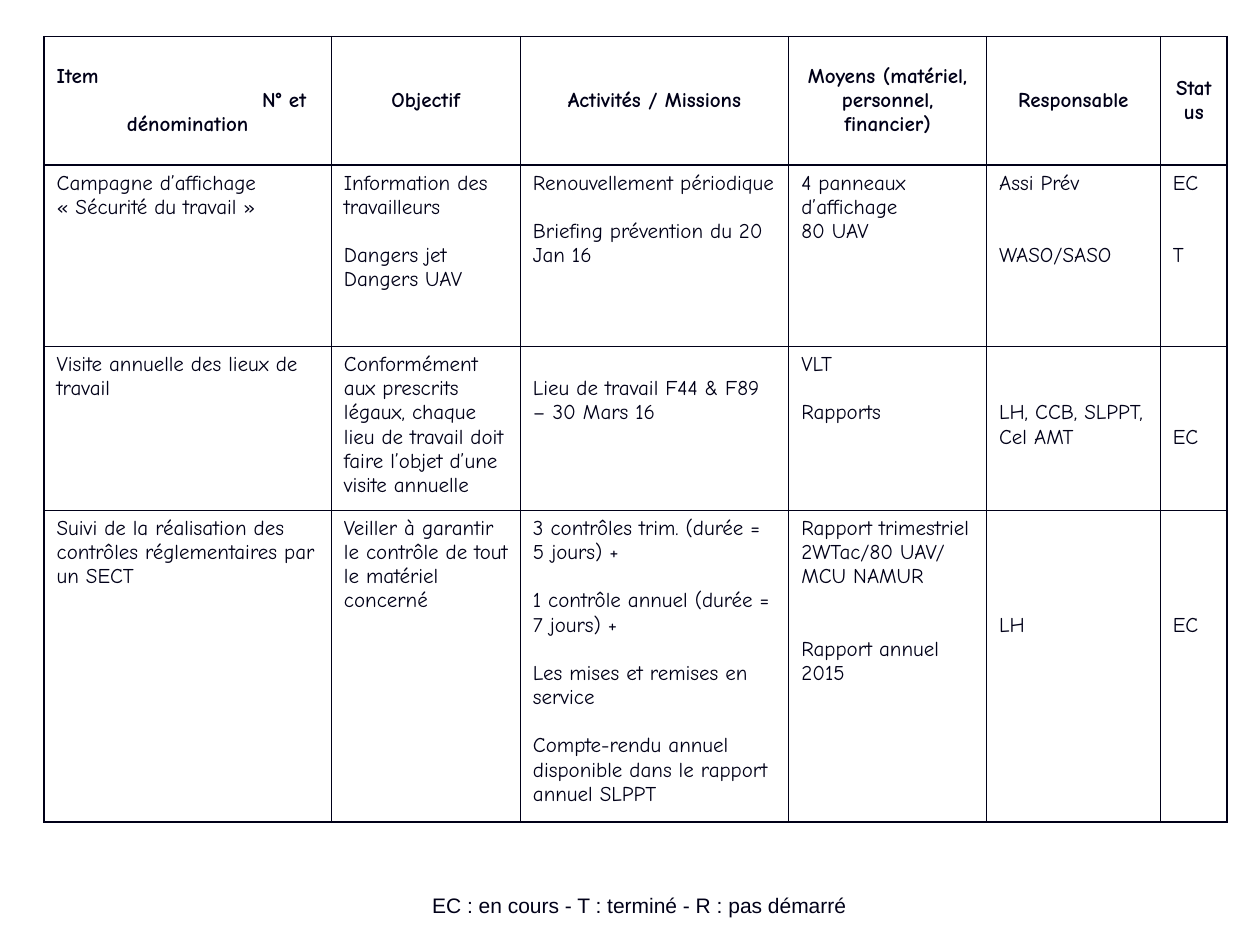
from dataclasses import dataclass

from lxml import etree
from pptx import Presentation
from pptx.dml.color import RGBColor
from pptx.enum.text import MSO_ANCHOR as Anchor, PP_ALIGN as Align
from pptx.oxml.ns import qn
from pptx.util import Inches, Pt

INK = "000018"
TABLE_FONT = "Comic Neue"
TEXT_SIZE = 12
LINE_POINTS = 13.8  # height of one line of table text
COLUMN_WIDTHS = [2.28, 1.5, 2.13, 1.57, 1.38, 0.53]
ROW_HEIGHTS = [1.02, 1.44, 1.26, 2.41]


@dataclass
class Line:
    """One paragraph, with the number of empty lines above it."""
    text: str
    gap: int = 0
    align: Align = Align.LEFT
    bold: bool = False
    right_indent: float = 0


def heading(text: str, align: Align = Align.CENTER, right_indent: float = 0) -> Line:
    return Line(text, 0, align, True, right_indent)


HEADINGS = [
    [heading("Item", Align.LEFT), heading("N° et", Align.RIGHT, 0.1), heading("dénomination")],
    [heading("Objectif")],
    [heading("Activités / Missions")],
    [heading("Moyens (matériel, personnel, financier)")],
    [heading("Responsable")],
    [heading("Status")],
]

ACTIONS = [
    [
        [Line("Campagne d’affichage"), Line("« Sécurité du travail »")],
        [Line("Information des travailleurs"), Line("Dangers jet", 1), Line("Dangers UAV")],
        [Line("Renouvellement périodique"), Line("Briefing prévention du 20 Jan 16", 1)],
        [Line("4 panneaux d’affichage"), Line("80 UAV")],
        [Line("Assi Prév"), Line("WASO/SASO", 2)],
        [Line("EC"), Line("T", 2)],
    ],
    [
        [Line("Visite annuelle des lieux de travail")],
        [Line("Conformément aux prescrits légaux, chaque lieu de travail doit "
              "faire l’objet d’une visite annuelle")],
        [Line("Lieu de travail F44 & F89 – 30 Mars 16", 1)],
        [Line("VLT"), Line("Rapports", 1)],
        [Line("LH, CCB, SLPPT, Cel AMT", 2)],
        [Line("EC", 3)],
    ],
    [
        [Line("Suivi de la réalisation des contrôles réglementaires par un SECT")],
        [Line("Veiller à garantir le contrôle de tout le matériel concerné")],
        [Line("3 contrôles trim. (durée = 5 jours) +"),
         Line("1 contrôle annuel (durée = 7 jours) +", 1),
         Line("Les mises et remises en service", 1),
         Line("Compte-rendu annuel disponible dans le rapport annuel SLPPT", 1)],
        [Line("Rapport trimestriel 2WTac/80 UAV/"), Line("MCU NAMUR"),
         Line("Rapport annuel 2015", 2)],
        [Line("LH", 4)],
        [Line("EC", 4)],
    ],
]


def color(hex_value: str) -> RGBColor:
    return RGBColor.from_string(hex_value)


def add_run(paragraph, text: str, font_name: str, bold: bool = False) -> None:
    run = paragraph.add_run()
    run.text = text
    run.font.name = font_name
    run.font.size = Pt(TEXT_SIZE)
    run.font.bold = bold
    run.font.color.rgb = color(INK)


def add_borders(cell) -> None:
    properties = cell._tc.get_or_add_tcPr()
    for side in ("lnL", "lnR", "lnT", "lnB"):
        border = etree.SubElement(properties, qn(f"a:{side}"), w=str(Pt(1)))
        fill = etree.SubElement(border, qn("a:solidFill"))
        etree.SubElement(fill, qn("a:srgbClr"), val=INK)


def fill_cell(cell, lines: list[Line], anchor: Anchor) -> None:
    add_borders(cell)
    cell.fill.background()
    cell.vertical_anchor = anchor
    cell.margin_left = cell.margin_right = Inches(0.1)
    cell.margin_bottom = Inches(0.05)
    # Empty lines above the first paragraph become top margin
    cell.margin_top = Inches(0.05) + Pt(lines[0].gap * LINE_POINTS)
    frame = cell.text_frame
    for index, line in enumerate(lines):
        paragraph = frame.add_paragraph() if index else frame.paragraphs[0]
        paragraph.alignment = line.align
        if index and line.gap:
            paragraph.space_before = Pt(line.gap * LINE_POINTS)
        paragraph._p.get_or_add_pPr().set("marR", str(Inches(line.right_indent)))
        add_run(paragraph, line.text, TABLE_FONT, line.bold)


def add_action_table(slide) -> None:
    rows = [HEADINGS, *ACTIONS]
    table = slide.shapes.add_table(
        len(rows), len(COLUMN_WIDTHS), Inches(0.35), Inches(0.29),
        Inches(sum(COLUMN_WIDTHS)), Inches(sum(ROW_HEIGHTS))).table
    table.first_row = False
    table.horz_banding = False
    for column, width in zip(table.columns, COLUMN_WIDTHS):
        column.width = Inches(width)
    for row, height, contents in zip(table.rows, ROW_HEIGHTS, rows):
        row.height = Inches(height)
        anchor = Anchor.MIDDLE if contents is HEADINGS else Anchor.TOP
        for cell, lines in zip(row.cells, contents):
            fill_cell(cell, lines, anchor)


def add_legend(slide) -> None:
    box = slide.shapes.add_textbox(Inches(2.32), Inches(6.83), Inches(5.51), Inches(0.5))
    frame = box.text_frame
    frame.word_wrap = True
    frame.vertical_anchor = Anchor.BOTTOM
    paragraph = frame.paragraphs[0]
    paragraph.alignment = Align.CENTER
    add_run(paragraph, "EC : en cours - T : terminé - R : pas démarré", "Arial")


def main() -> None:
    presentation = Presentation()
    presentation.slide_width = Inches(10)
    presentation.slide_height = Inches(7.5)
    slide = presentation.slides.add_slide(presentation.slide_layouts[6])

    # Status legend under the table
    add_legend(slide)
    # Table of prevention actions
    add_action_table(slide)

    presentation.save("out.pptx")


if __name__ == "__main__":
    main()
